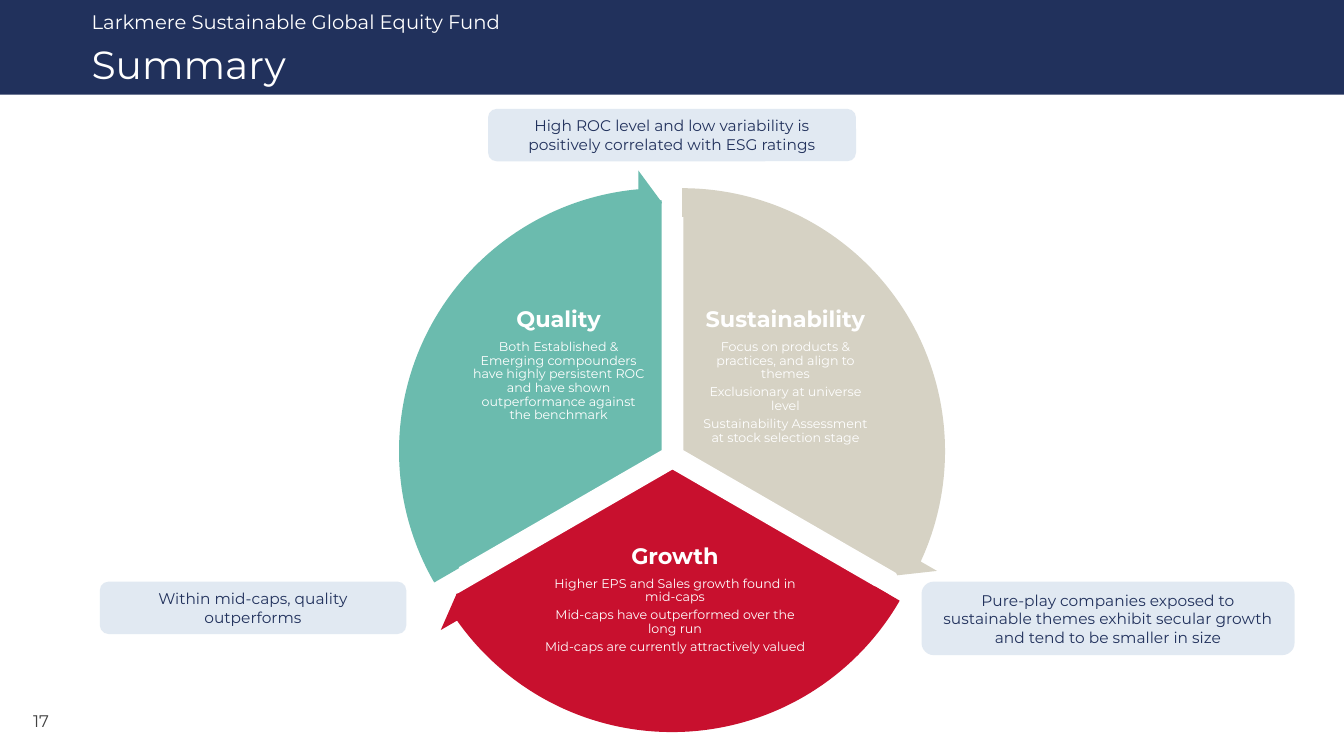
from dataclasses import dataclass

from lxml.etree import SubElement
from pptx import Presentation
from pptx.dml.color import RGBColor
from pptx.enum.shapes import MSO_SHAPE as Shape
from pptx.enum.text import MSO_ANCHOR as Anchor, MSO_AUTO_SIZE as AutoSize, PP_ALIGN as Align
from pptx.oxml.ns import qn
from pptx.util import Inches, Pt

COLOURS = {
    "navy": "21315C",
    "sand": "D6D2C4",
    "red": "C8102E",
    "teal": "6BBBAE",
    "callout": "9DB9D5",
    "white": "FFFFFF",
    "grey": "414141",
}
FONT = "Montserrat"
PIE_SIZE = 4.98
ARROW_SIZE = 5.59
ARROW_OFFSET = (-0.31, -0.3)


@dataclass
class Sector:
    title: str
    points: list[str]
    colour: str
    pie_at: tuple[float, float]
    pie_angles: tuple[float, float]
    arrow_angles: tuple[float, float]
    text_at: tuple[float, float, float, float]


@dataclass
class Callout:
    text: str
    at: tuple[float, float, float, float]


@dataclass
class Label:
    text: str
    at: tuple[float, float, float, float]
    size: float
    colour: str
    anchor: Anchor
    margin_x: float = 0
    margin_y: float = 0


SECTORS = [
    Sector(
        "Sustainability",
        [
            "Focus on products & practices, and align to themes",
            "Exclusionary at universe level",
            "Sustainability Assessment at stock selection stage",
        ],
        "sand", (4.28, 1.98), (162, 18), (14.725, 161.994), (6.9, 3.04, 1.78, 1.48),
    ),
    Sector(
        "Growth",
        [
            "Higher EPS and Sales growth found in mid-caps",
            "Mid-caps have outperformed over the long run",
            "Mid-caps are currently attractively valued",
        ],
        "red", (4.18, 2.16), (18, 90), (86.72, 18.005), (5.36, 5.39, 2.67, 1.3),
    ),
    Sector(
        "Quality",
        [
            "Both Established & Emerging compounders have highly persistent ROC "
            "and have shown outperformance against the benchmark",
        ],
        "teal", (4.08, 1.98), (90, 162), (158.73, 90), (4.65, 3.04, 1.78, 1.48),
    ),
]

CALLOUTS = [
    Callout("High ROC level and low variability is positively correlated with ESG ratings",
            (4.84, 1.08, 3.65, 0.52)),
    Callout("Pure-play companies exposed to sustainable themes exhibit secular growth "
            "and tend to be smaller in size", (9.14, 5.77, 3.7, 0.73)),
    Callout("Within mid-caps, quality outperforms", (0.99, 5.77, 3.04, 0.52)),
]

LABELS = [
    Label("Larkmere Sustainable Global Equity Fund", (0.91, 0.09, 11.76, 0.24),
          14, "white", Anchor.BOTTOM),
    Label("Summary", (0.91, 0.33, 11.76, 0.61), 28, "white", Anchor.MIDDLE),
    Label("17", (0.23, 7, 0.66, 0.4), 12, "grey", Anchor.TOP, 0.1, 0.05),
]


def rgb(name: str) -> RGBColor:
    return RGBColor.from_string(COLOURS[name])


def style_text(para, size: float, colour: str, bold: bool = False) -> None:
    for span in para.runs:
        span.font.name = FONT
        span.font.size = Pt(size)
        span.font.bold = bold
        span.font.color.rgb = rgb(colour)


def set_margins(frame, horizontal: float, vertical: float) -> None:
    frame.margin_left = frame.margin_right = Inches(horizontal)
    frame.margin_top = frame.margin_bottom = Inches(vertical)


def add_filled(shapes, kind: Shape, at: tuple, colour: str, adjustments: tuple = ()):
    shape = shapes.add_shape(kind, *map(Inches, at))
    shape.shadow.inherit = False
    shape.fill.solid()
    shape.fill.fore_color.rgb = rgb(colour)
    shape.line.fill.background()
    for index, value in enumerate(adjustments):
        shape.adjustments[index] = value
    return shape


def add_sector(shapes, sector: Sector) -> None:
    pie = add_filled(shapes, Shape.PIE, (*sector.pie_at, PIE_SIZE, PIE_SIZE),
                     sector.colour, sector.pie_angles)
    pie.line.color.rgb = rgb("white")
    pie.line.width = Pt(1)

    box = shapes.add_textbox(*map(Inches, sector.text_at))
    frame = box.text_frame
    frame.word_wrap = True
    set_margins(frame, 0.02, 0.02)
    frame.text = "\n".join([sector.title, *sector.points])
    for index, para in enumerate(frame.paragraphs):
        size = 9 if index else 16
        para.alignment = Align.CENTER
        para.line_spacing = 0.9
        para.space_after = Pt(0.35 * size)
        style_text(para, size, "white", bold=index == 0)


def add_arrow(shapes, sector: Sector) -> None:
    left, top = (place + shift for place, shift in zip(sector.pie_at, ARROW_OFFSET))
    add_filled(shapes, Shape.CIRCULAR_ARROW, (left, top, ARROW_SIZE, ARROW_SIZE),
               sector.colour, (0.051, 3.275, *sector.arrow_angles, 0.059))


def add_callout(shapes, callout: Callout) -> None:
    shape = add_filled(shapes, Shape.ROUNDED_RECTANGLE, callout.at, "callout")
    colour = shape.fill._xPr.find(f"{qn('a:solidFill')}/{qn('a:srgbClr')}")
    SubElement(colour, qn("a:alpha"), val="30000")
    frame = shape.text_frame
    frame.word_wrap = True
    frame.auto_size = AutoSize.SHAPE_TO_FIT_TEXT
    frame.vertical_anchor = Anchor.MIDDLE
    frame.text = callout.text
    frame.paragraphs[0].alignment = Align.CENTER
    style_text(frame.paragraphs[0], 11, "navy")


def add_label(shapes, label: Label) -> None:
    frame = shapes.add_textbox(*map(Inches, label.at)).text_frame
    frame.word_wrap = True
    frame.vertical_anchor = label.anchor
    set_margins(frame, label.margin_x, label.margin_y)
    frame.text = label.text
    style_text(frame.paragraphs[0], label.size, label.colour)


def main() -> None:
    deck = Presentation()
    deck.slide_width, deck.slide_height = Inches(13.33), Inches(7.5)
    page = deck.slides.add_slide(deck.slide_layouts[6])
    add_filled(page.shapes, Shape.RECTANGLE, (0, -0.1, 13.33, 1.04), "navy")
    cycle = page.shapes.add_group_shape()
    for sector in SECTORS:
        add_sector(cycle.shapes, sector)
    for sector in SECTORS:
        add_arrow(cycle.shapes, sector)
    for label in LABELS:
        add_label(page.shapes, label)
    for callout in CALLOUTS:
        add_callout(page.shapes, callout)
    deck.save("out.pptx")


if __name__ == "__main__":
    main()
